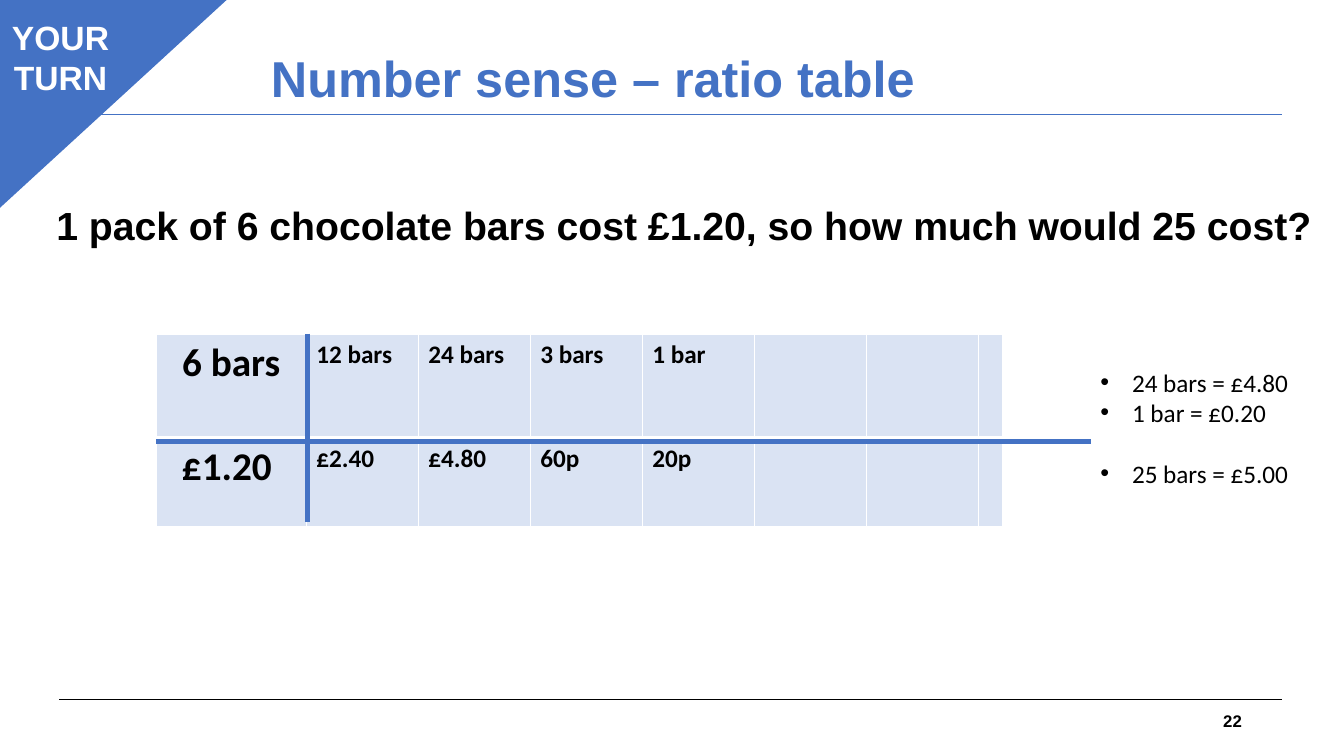
from lxml.etree import SubElement
from pptx import Presentation
from pptx.dml.color import RGBColor
from pptx.enum.shapes import MSO_CONNECTOR, MSO_SHAPE
from pptx.enum.text import MSO_ANCHOR, PP_ALIGN
from pptx.oxml import parse_xml
from pptx.oxml.ns import nsdecls, qn
from pptx.util import Pt

BLUE = RGBColor(0x44, 0x72, 0xC4)
PALE_BLUE = RGBColor(0xDA, 0xE3, 0xF3)
BLACK = RGBColor(0, 0, 0)
WHITE = RGBColor(0xFF, 0xFF, 0xFF)


class LessonSlide:
    heading_font = "Arial"
    body_font = "Calibri"

    def __init__(self, slide):
        self.slide = slide

    def style(self, paragraph, size, color=BLACK, bold=True, font=heading_font,
              align=PP_ALIGN.LEFT):
        paragraph.alignment = align
        paragraph.font.name = font
        paragraph.font.size = Pt(size)
        paragraph.font.bold = bold
        paragraph.font.color.rgb = color

    def line(self, x1, y1, x2, y2, color, width):
        rule = self.slide.shapes.add_connector(
            MSO_CONNECTOR.STRAIGHT, Pt(x1), Pt(y1), Pt(x2), Pt(y2))
        rule.line.color.rgb = color
        rule.line.width = Pt(width)
        SubElement(rule._element.spPr, qn("a:effectLst"))

    def text(self, box, words, size, color=BLACK, anchor=MSO_ANCHOR.TOP,
             align=PP_ALIGN.LEFT, spacing=1.0, before=0):
        frame = self.slide.shapes.add_textbox(*map(Pt, box)).text_frame
        frame.word_wrap = True
        frame.vertical_anchor = anchor
        frame.text = words
        paragraph = frame.paragraphs[0]
        paragraph.line_spacing = spacing
        paragraph.space_before = Pt(before)
        self.style(paragraph, size, color, align=align)

    def shape(self, preset, box, line_width):
        block = self.slide.shapes.add_shape(preset, *map(Pt, box))
        block.shadow.inherit = False
        block.fill.solid()
        block.fill.fore_color.rgb = BLUE
        block.line.color.rgb = BLUE
        block.line.width = Pt(line_width)
        return block

    def corner(self, box):
        triangle = self.shape(MSO_SHAPE.ISOSCELES_TRIANGLE, box, 1)
        triangle.adjustments[0] = 0
        triangle._element.spPr.find(qn("a:xfrm")).set("flipV", "1")

    def label(self, box, words, size):
        frame = self.shape(MSO_SHAPE.RECTANGLE, box, 0.75).text_frame
        frame.word_wrap = True
        frame.vertical_anchor = MSO_ANCHOR.TOP
        frame.text = words
        for paragraph in frame.paragraphs:
            self.style(paragraph, size, WHITE, align=PP_ALIGN.CENTER)

    def bullets(self, box, items, size, indent):
        frame = self.slide.shapes.add_textbox(*map(Pt, box)).text_frame
        frame.word_wrap = True
        frame.text = "\n".join(words for words, gap in items)
        for paragraph, (words, gap) in zip(frame.paragraphs, items):
            self.style(paragraph, size, bold=False, font=self.body_font)
            paragraph.space_before = Pt(gap)
            properties = paragraph._p.get_or_add_pPr()
            properties.set("marL", str(Pt(indent)))
            properties.set("indent", str(-Pt(indent)))
            SubElement(properties, qn("a:buFont")).set("typeface", self.heading_font)
            SubElement(properties, qn("a:buChar")).set("char", "•")

    def borders(self, cell, widths):
        properties = cell._tc.get_or_add_tcPr()
        for position, (side, width) in enumerate(widths.items()):
            properties.insert(position, parse_xml(
                f'<a:ln{side} {nsdecls("a")} w="{Pt(width)}"><a:solidFill>'
                f'<a:srgbClr val="{WHITE}"/></a:solidFill></a:ln{side}>'))

    def ratio_table(self, left, top, widths, heights, rows):
        table = self.slide.shapes.add_table(
            len(heights), len(widths), Pt(left), Pt(top),
            Pt(sum(widths)), Pt(sum(heights))).table
        table.first_row = False
        table.horz_banding = False
        for column, width in zip(table.columns, widths):
            column.width = Pt(width)
        for r, (height, entries) in enumerate(zip(heights, rows)):
            table.rows[r].height = Pt(height)
            for c in range(len(widths)):
                cell = table.cell(r, c)
                cell.text = entries[c] if c < len(entries) else ""
                cell.fill.solid()
                cell.fill.fore_color.rgb = PALE_BLUE
                self.style(cell.text_frame.paragraphs[0], 18 if c else 28,
                           font=self.body_font,
                           align=PP_ALIGN.LEFT if c else PP_ALIGN.CENTER)
                self.borders(cell, {"L": 1, "R": 1, "T": 3 if r else 1,
                                    "B": 1 if r else 3})


def main():
    deck = Presentation()
    deck.slide_width, deck.slide_height = Pt(960), Pt(540)
    lesson = LessonSlide(deck.slides.add_slide(deck.slide_layouts[6]))

    for y, color in ((499.7, BLACK), (82, BLUE)):
        lesson.line(42.5, y, 916, y, color, 0.75)
    lesson.text((186.5, 5.8, 828, 104.4), "Number sense – ratio table", 36, BLUE,
                MSO_ANCHOR.MIDDLE, spacing=0.9)
    lesson.text((33.1, 144, 910.8, 342.7),
                "1 pack of 6 chocolate bars cost £1.20, so how much would 25 cost?",
                28, spacing=0.9, before=10)
    lesson.text((678.2, 500.4, 216, 28.8), "22", 12, anchor=MSO_ANCHOR.MIDDLE,
                align=PP_ALIGN.RIGHT)
    lesson.corner((-2.2, -1.4, 164.9, 151.2))
    lesson.label((0.7, 8.6, 85, 59.8), "YOUR \nTURN", 24)

    lesson.ratio_table(111.6, 239, [107.2] + [80] * 6 + [16.6], [74, 63], [
        ["6 bars", "12 bars", "24 bars", "3 bars", "1 bar"],
        ["£1.20 ", "£2.40", "£4.80", "60p", "20p"]])
    lesson.line(111.6, 315.4, 779, 315.4, BLUE, 3)
    lesson.line(219.6, 238.3, 219.6, 373, BLUE, 3)
    lesson.bullets((779, 258.5, 164.9, 94.3), [
        ("24 bars = £4.80", 0), ("1 bar = £0.20", 0), ("25 bars = £5.00", 22)],
        18, 22.5)

    deck.save("out.pptx")


if __name__ == "__main__":
    main()
